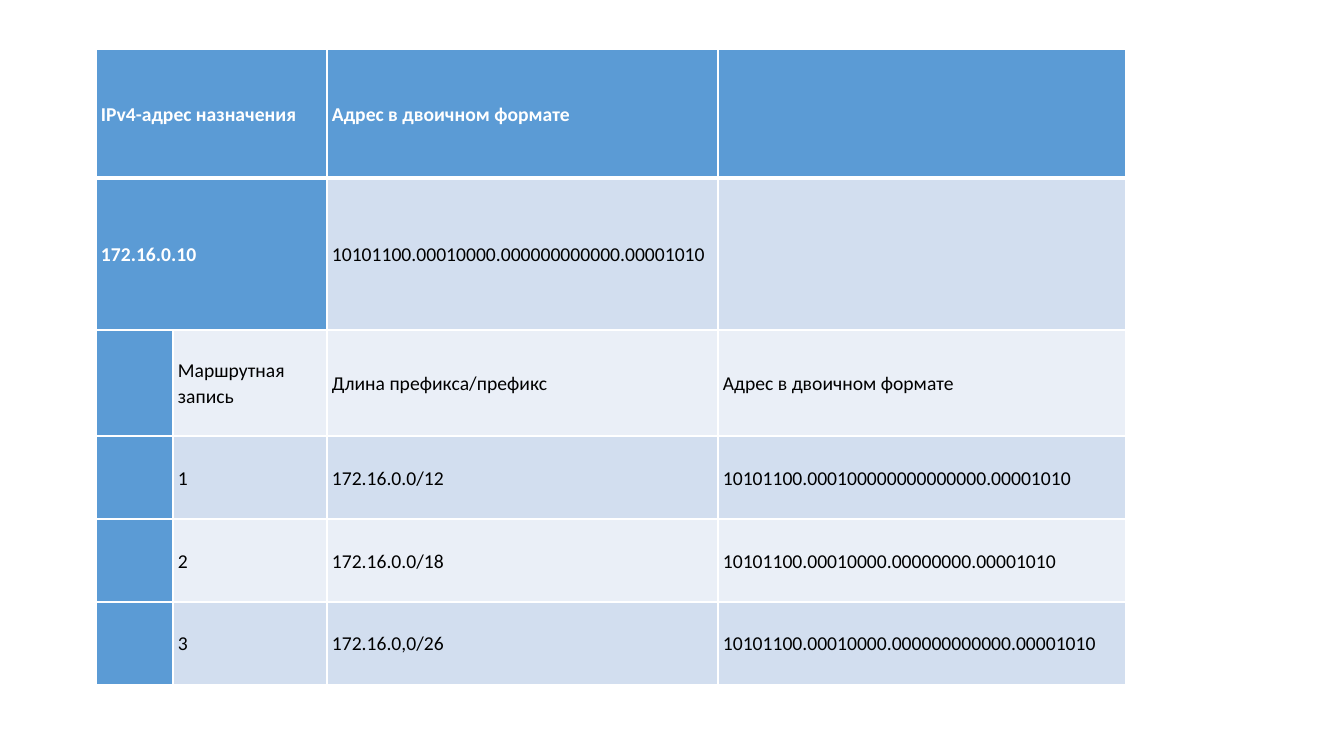
"""Build a slide with a table matching an IPv4 address to its route entries."""
import pptx
import pptx.dml.color
import pptx.enum.text
import pptx.oxml.ns
import pptx.util
from lxml import etree

ROWS = [
    ("IPv4-адрес назначения", "", "Адрес в двоичном формате", ""),
    ("172.16.0.10", "", "10101100.00010000.000000000000.00001010", ""),
    ("", "Маршрутная запись", "Длина префикса/префикс", "Адрес в двоичном формате"),
    ("", "1", "172.16.0.0/12", "10101100.000100000000000000.00001010"),
    ("", "2", "172.16.0.0/18", "10101100.00010000.00000000.00001010"),
    ("", "3", "172.16.0,0/26", "10101100.00010000.000000000000.00001010"),
]
MERGED_ROWS = (0, 1)
COLUMN_WIDTHS = (77, 154, 391, 408)
ROW_HEIGHTS = (129, 152, 106, 83, 83, 83)
SLIDE_WIDTH, SLIDE_HEIGHT = 1344, 756
TABLE_LEFT, TABLE_TOP = 96, 49
CELL_MARGIN = 5
PIXELS_PER_INCH = 100.8

WHITE = pptx.dml.color.RGBColor(0xFF, 0xFF, 0xFF)
BLACK = pptx.dml.color.RGBColor(0x00, 0x00, 0x00)
HEADER_BLUE = pptx.dml.color.RGBColor(0x5B, 0x9B, 0xD5)
BAND_DARK = pptx.dml.color.RGBColor(0xD2, 0xDE, 0xEF)
BAND_LIGHT = pptx.dml.color.RGBColor(0xEA, 0xEF, 0xF7)


def px(length):
    """Turn pixels into EMU."""
    return pptx.util.Emu(round(length * 914400 / PIXELS_PER_INCH))


def write_text(cell, text, *, color, bold, size=14, font_name="Calibri"):
    """Put formatted text into a cell."""
    paragraph = cell.text_frame.paragraphs[0]
    paragraph.text = text
    paragraph.line_spacing = 1.07
    paragraph.space_after = pptx.util.Pt(8)
    paragraph.font.size = pptx.util.Pt(size)
    paragraph.font.name = font_name
    paragraph.font.bold = bold
    paragraph.font.color.rgb = color


def draw_borders(cell, widths):
    """Add solid white cell borders with the given widths in points."""
    properties = cell._tc.get_or_add_tcPr()
    for tag, width in widths.items():
        line = etree.SubElement(properties, pptx.oxml.ns.qn(f"a:{tag}"),
                                w=str(pptx.util.Pt(width)))
        fill = etree.SubElement(line, pptx.oxml.ns.qn("a:solidFill"))
        etree.SubElement(fill, pptx.oxml.ns.qn("a:srgbClr"), val=str(WHITE))


def format_cell(cell, row, column):
    """Give a cell its borders, fill, margins and text."""
    draw_borders(cell, {"lnL": 1, "lnR": 1, "lnT": 3 if row == 1 else 1,
                        "lnB": 3 if row == 0 else 1})
    is_header = row == 0 or column == 0 or (column == 1 and row in MERGED_ROWS)
    band = BAND_DARK if row % 2 else BAND_LIGHT
    cell.fill.solid()
    cell.fill.fore_color.rgb = HEADER_BLUE if is_header else band
    cell.vertical_anchor = pptx.enum.text.MSO_ANCHOR.MIDDLE
    cell.margin_left = cell.margin_right = px(CELL_MARGIN)
    cell.margin_top = cell.margin_bottom = px(CELL_MARGIN)
    if ROWS[row][column]:
        write_text(cell, ROWS[row][column], bold=is_header,
                   color=WHITE if is_header else BLACK)


def main():
    """Create and save the presentation."""
    presentation = pptx.Presentation()
    presentation.slide_width = px(SLIDE_WIDTH)
    presentation.slide_height = px(SLIDE_HEIGHT)
    slide = presentation.slides.add_slide(presentation.slide_layouts[6])
    table = slide.shapes.add_table(
        len(ROW_HEIGHTS), len(COLUMN_WIDTHS), px(TABLE_LEFT), px(TABLE_TOP),
        px(sum(COLUMN_WIDTHS)), px(sum(ROW_HEIGHTS))).table
    for column, width in zip(table.columns, COLUMN_WIDTHS):
        column.width = px(width)
    for row, height in zip(table.rows, ROW_HEIGHTS):
        row.height = px(height)
    for row in range(len(ROW_HEIGHTS)):
        for column in range(len(COLUMN_WIDTHS)):
            format_cell(table.cell(row, column), row, column)
    for row in MERGED_ROWS:
        table.cell(row, 0).merge(table.cell(row, 1))
    presentation.save("out.pptx")


if __name__ == "__main__":
    main()
